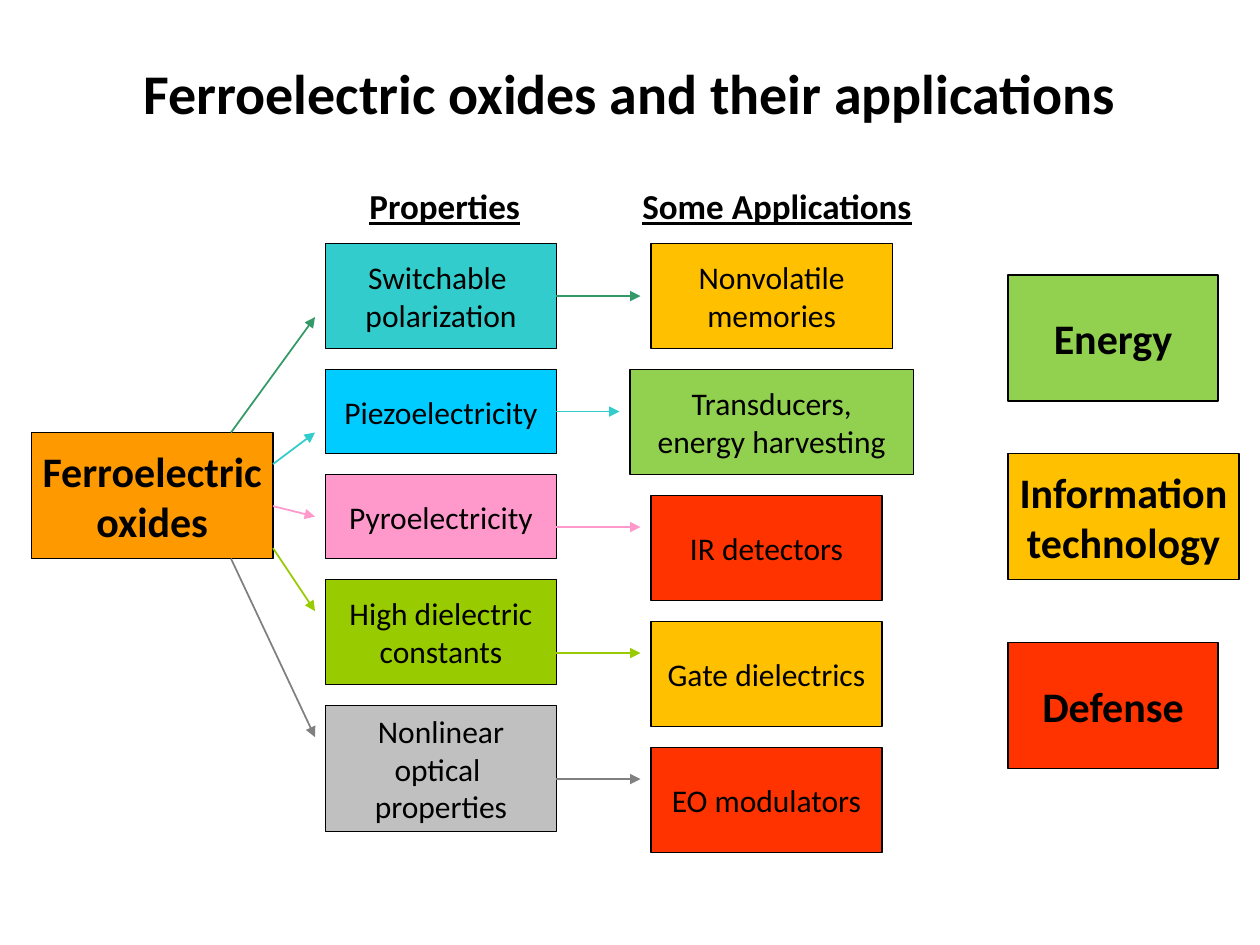
from lxml.etree import SubElement
from pptx import Presentation
from pptx.dml.color import RGBColor
from pptx.enum.shapes import MSO_CONNECTOR, MSO_SHAPE
from pptx.enum.text import MSO_ANCHOR, MSO_AUTO_SIZE, PP_ALIGN
from pptx.oxml.ns import qn
from pptx.util import Pt

SCALE = 7620
BLACK = RGBColor(0, 0, 0)
ORANGE = RGBColor(0xFF, 0x99, 0x00)
LEAF = RGBColor(0x92, 0xD0, 0x50)
GOLD = RGBColor(0xFF, 0xC0, 0x00)
RED = RGBColor(0xFF, 0x33, 0x00)
TEAL = RGBColor(0x33, 0xCC, 0xCC)
CYAN = RGBColor(0x00, 0xCC, 0xFF)
PINK = RGBColor(0xFF, 0x99, 0xCC)
LIME = RGBColor(0x99, 0xCC, 0x00)
SILVER = RGBColor(0xC0, 0xC0, 0xC0)
GREEN = RGBColor(0x33, 0x99, 0x66)
GRAY = RGBColor(0x80, 0x80, 0x80)

TOP, GAP = 232, 20
PROPS = [
    ("Switchable \npolarization", 100, TEAL),
    ("Piezoelectricity", 80, CYAN),
    ("Pyroelectricity", 80, PINK),
    ("High dielectric\nconstants", 100, LIME),
    ("Nonlinear\noptical \nproperties", 120, SILVER),
]
USES = [
    ("Nonvolatile\nmemories", 620, 230, GOLD),
    ("Transducers,\nenergy harvesting", 600, 270, LEAF),
    ("IR detectors", 620, 220, RED),
    ("Gate dielectrics", 620, 220, GOLD),
    ("EO modulators", 620, 220, RED),
]
FIELDS = [
    ("Energy", 262, 200, LEAF),
    ("Information\ntechnology", 432, 220, GOLD),
    ("Defense", 612, 200, RED),
]
LINKS = [
    (GREEN, 220, 412, 302, 282),
    (TEAL, 260, 442, 412, 392),
    (PINK, 260, 482, 492, 502),
    (LIME, 260, 522, 582, 622),
    (GRAY, 220, 532, 702, 742),
]


def px(*sizes):
    return [size * SCALE for size in sizes]


def write(frame, text, size, bold, align, line=False):
    frame.text = text
    for para in frame.paragraphs:
        para.alignment = align
        for run in para.runs:
            font = run.font
            font.name = "Calibri"
            font.size = Pt(size)
            font.bold = bold
            font.underline = line
            font.color.rgb = BLACK


def add_box(slide, text, place, fill, size=18, bold=False):
    box = slide.shapes.add_shape(MSO_SHAPE.RECTANGLE, *px(*place))
    box.shadow.inherit = False
    box.fill.solid()
    box.fill.fore_color.rgb = fill
    box.line.color.rgb = BLACK
    box.line.width = Pt(0.75)
    frame = box.text_frame
    frame.word_wrap = False
    frame.vertical_anchor = MSO_ANCHOR.MIDDLE
    write(frame, text, size, bold, PP_ALIGN.CENTER)
    return box


def add_label(slide, text, place, size, align, wrap=False, line=False):
    frame = slide.shapes.add_textbox(*px(*place)).text_frame
    frame.word_wrap = wrap
    frame.auto_size = MSO_AUTO_SIZE.SHAPE_TO_FIT_TEXT
    write(frame, text, size, True, align, line)


def add_arrow(slide, ends, color):
    arrow = slide.shapes.add_connector(MSO_CONNECTOR.STRAIGHT, *px(*ends))
    arrow.line.color.rgb = color
    arrow.line.width = Pt(1)
    SubElement(arrow.line._get_or_add_ln(), qn("a:tailEnd"), type="triangle")
    SubElement(arrow._element.spPr, qn("a:effectLst"))
    return arrow


def add_rows(slide):
    top = TOP
    for row, (prop, use, link) in enumerate(zip(PROPS, USES, LINKS)):
        text, high, fill = prop
        box = add_box(slide, text, (310, top, 220, high), fill)
        text, left, wide, fill = use
        add_box(slide, text, (left, TOP + row * 120, wide, 100), fill)
        color, start, rise, end, level = link
        add_arrow(slide, (start, rise, 300, end), color)
        arrow = add_arrow(slide, (530, level, left - 10, level), color)
        if level == top + high // 2:
            arrow.begin_connect(box, 3)
        top += high + GAP


def main():
    deck = Presentation()
    deck.slide_width, deck.slide_height = px(1200, 900)
    slide = deck.slides.add_slide(deck.slide_layouts[6])
    add_label(slide, "Ferroelectric oxides and their applications",
              (70, 50, 1060, 77), 32, PP_ALIGN.CENTER, wrap=True)
    add_label(slide, "Properties", (340, 170, 168, 52), 20,
              PP_ALIGN.LEFT, line=True)
    add_label(slide, "Some Applications", (600, 170, 283, 52), 20,
              PP_ALIGN.LEFT, line=True)
    add_box(slide, "Ferroelectric\noxides", (30, 412, 230, 120), ORANGE, 24, True)
    add_rows(slide)
    for text, top, wide, fill in FIELDS:
        add_box(slide, text, (960, top, wide, 120), fill, 24, True)
    deck.save("out.pptx")


if __name__ == "__main__":
    main()
